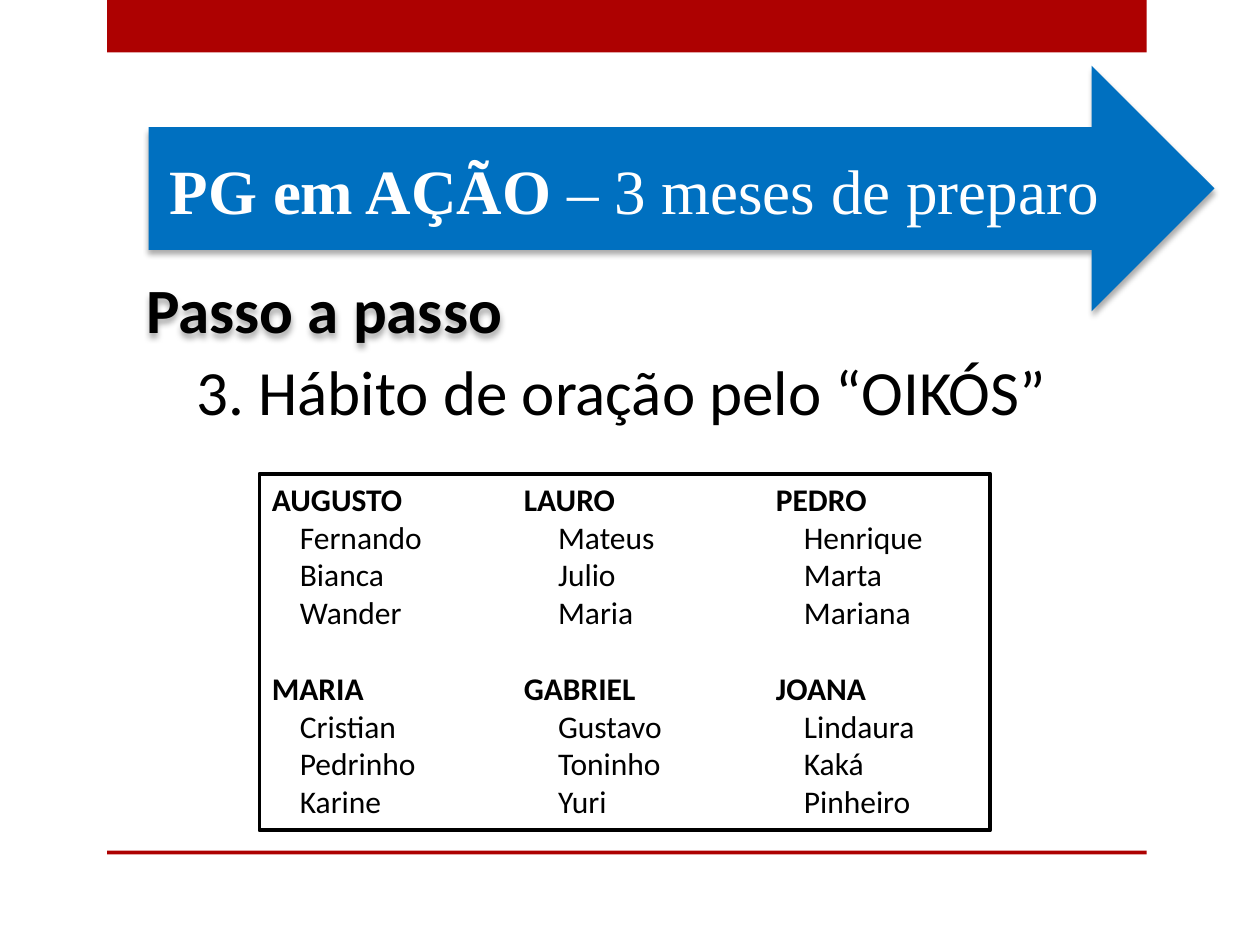
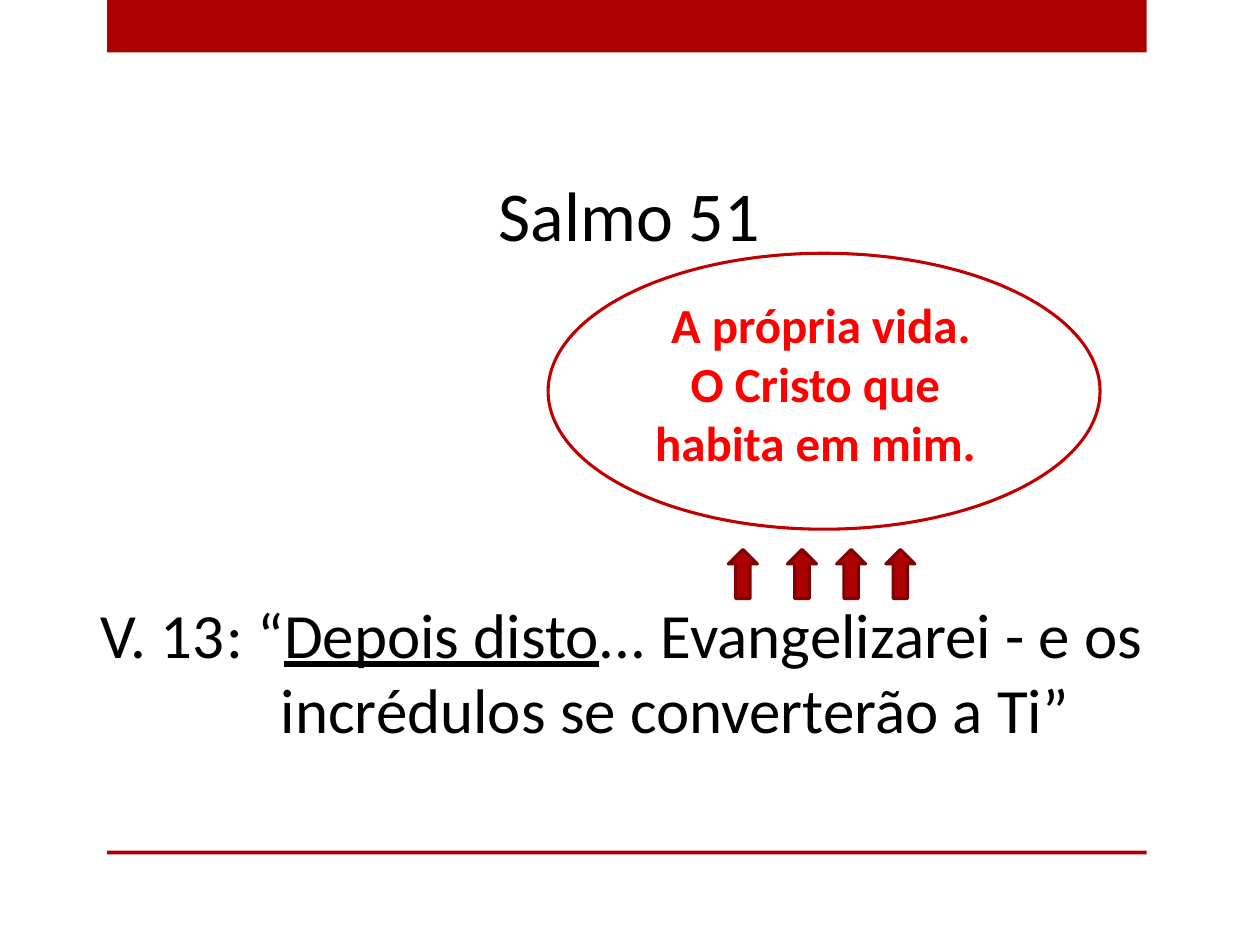
from lxml.etree import SubElement
from pptx import Presentation
from pptx.dml.color import RGBColor
from pptx.enum.shapes import MSO_SHAPE as Shape
from pptx.enum.text import PP_ALIGN as Align
from pptx.oxml.ns import qn
from pptx.util import Pt

# Content: each run is (text, style)
BANNER = [[("PG em AÇÃO ", {"bold": True}), ("– 3 meses de preparo", {})]]
HEADING = [[("Passo a passo", {"bold": True})]]
STEP = [[("3. Hábito de oração pelo “OIKÓS”", {})]]
PRAYER_GROUPS = [
    {"AUGUSTO": ["Fernando", "Bianca", "Wander"],
     "LAURO": ["Mateus", "Julio", "Maria"],
     "PEDRO": ["Henrique", "Marta", "Mariana"]},
    {"MARIA": ["Cristian", "Pedrinho", "Karine"],
     "GABRIEL": ["Gustavo", "Toninho", "Yuri"],
     "JOANA": ["Lindaura", "Kaká", "Pinheiro"]},
]
PSALM = [[("Salmo 51", {})]]
VERSE = [
    [("V. 13\t: “", {}), ("Depois disto", {"underline": True}), ("... Evangelizarei - e os", {})],
    [("incrédulos se converterão a Ti”", {})],
]
LIFE = [[(line, {"bold": True})] for line in ("A própria vida.", "O Cristo que ", "habita em mim. ")]

# Shared look
COLORS = {"band": "AD0101", "arrow": "0070C0", "arrow_edge": "800101", "ellipse": "C00000",
          "life": "FF0000", "text": "000000", "white": "FFFFFF"}
BODY_FONT, BANNER_FONT = "Calibri", "Times New Roman"
BAND_LEFT, BAND_WIDTH = 61.2, 594
BANDS = [(0, 30), (486, 2.3)]  # top, height

# Name grid and small arrows
LEADER_TABS = [144, 288]
MEMBER_TABS = [16, 163.5, 304]
GROUP_GAP = 21.6
SMALL_ARROW_LEFTS = [416.2, 450, 478.1, 506.2]


def rgb(name):
    return RGBColor.from_string(COLORS[name])


def set_line(shape, color, width):
    shape.line.color.rgb = rgb(color)
    shape.line.width = Pt(width)


def add_shape(slide, kind, box, fill=None, line=None, width=1.75):
    shape = slide.shapes.add_shape(kind, *map(Pt, box))
    if fill:
        shape.fill.solid()
        shape.fill.fore_color.rgb = rgb(fill)
    else:
        shape.fill.background()
    if line:
        set_line(shape, line, width)
    else:
        shape.line.fill.background()
    shape.shadow.inherit = False
    return shape


def add_shadow(shape):
    shape.shadow.inherit = False
    effects = shape.element.spPr.find(qn("a:effectLst"))
    shadow = SubElement(effects, qn("a:outerShdw"), blurRad=str(Pt(3.5)), dist=str(Pt(2.2)),
                        dir="5400000", rotWithShape="0")
    color = SubElement(shadow, qn("a:srgbClr"), val=COLORS["text"])
    SubElement(color, qn("a:alpha"), val="32000")


def add_text(slide, box, lines, size, color="text", font=BODY_FONT, align=Align.LEFT):
    shape = slide.shapes.add_textbox(*map(Pt, box))
    frame = shape.text_frame
    frame.word_wrap = True
    for index, runs in enumerate(lines):
        paragraph = frame.paragraphs[0] if index == 0 else frame.add_paragraph()
        paragraph.alignment = align
        for text, style in runs:
            run = paragraph.add_run()
            run.text = text
            run.font.name, run.font.size = font, Pt(size)
            run.font.color.rgb = rgb(color)
            run.font.bold = style.get("bold", False)
            run.font.underline = style.get("underline", False)
    return shape


def set_tabs(paragraph, stops):
    tabs = SubElement(paragraph._p.get_or_add_pPr(), qn("a:tabLst"))
    for stop in stops:
        SubElement(tabs, qn("a:tab"), pos=str(Pt(stop)), algn="l")


def add_slide(presentation):
    slide = presentation.slides.add_slide(presentation.slide_layouts[6])
    for top, height in BANDS:
        add_shape(slide, Shape.RECTANGLE, (BAND_LEFT, top, BAND_WIDTH, height), "band")
    return slide


def add_prayer_list(slide, box):
    lines, stops, gaps = [], [], []
    for number, group in enumerate(PRAYER_GROUPS):
        lines.append([("\t".join(group), {"bold": True})])
        stops.append(LEADER_TABS)
        gaps.append(GROUP_GAP if number else 0)
        for members in zip(*group.values()):
            lines.append([("\t" + "\t".join(members), {})])
            stops.append(MEMBER_TABS)
            gaps.append(0)
    shape = add_text(slide, box, lines, 18)
    set_line(shape, "text", 2.25)
    for paragraph, tabs, gap in zip(shape.text_frame.paragraphs, stops, gaps):
        paragraph.space_before = Pt(gap)
        set_tabs(paragraph, tabs)


def build_steps_slide(presentation):
    slide = add_slide(presentation)
    banner = add_shape(slide, Shape.RIGHT_ARROW, (85, 37.5, 609, 140.4), "arrow")
    add_shadow(banner)
    add_text(slide, (90, 82.8, 567.4, 51), BANNER, 36, "white", BANNER_FONT)
    add_shadow(add_text(slide, (76.5, 151.2, 236, 51), HEADING, 36))
    add_text(slide, (105.1, 198, 504.7, 94.3), STEP, 36)
    add_prayer_list(slide, (148.3, 270.7, 417.6, 203.8))


def build_psalm_slide(presentation):
    slide = add_slide(presentation)
    verse = add_text(slide, (50.4, 336.5, 613.4, 95), VERSE, 36)
    first, second = verse.text_frame.paragraphs
    set_tabs(first, [72])
    second._p.get_or_add_pPr().set("marL", str(Pt(103)))
    add_text(slide, (44.6, 94.3, 630, 55.4), PSALM, 40, align=Align.CENTER)
    for left in SMALL_ARROW_LEFTS:
        add_shape(slide, Shape.UP_ARROW, (left, 313.9, 16.6, 28.1), "band", "arrow_edge")
    add_shape(slide, Shape.OVAL, (313.2, 144.7, 315.4, 157.7), line="ellipse")
    add_text(slide, (365.8, 164.9, 206.6, 108.7), LIFE, 28, "life", align=Align.CENTER)


def main():
    presentation = Presentation()
    presentation.slide_width, presentation.slide_height = Pt(720), Pt(540)
    build_steps_slide(presentation)
    build_psalm_slide(presentation)
    presentation.save("out.pptx")


if __name__ == "__main__":
    main()
